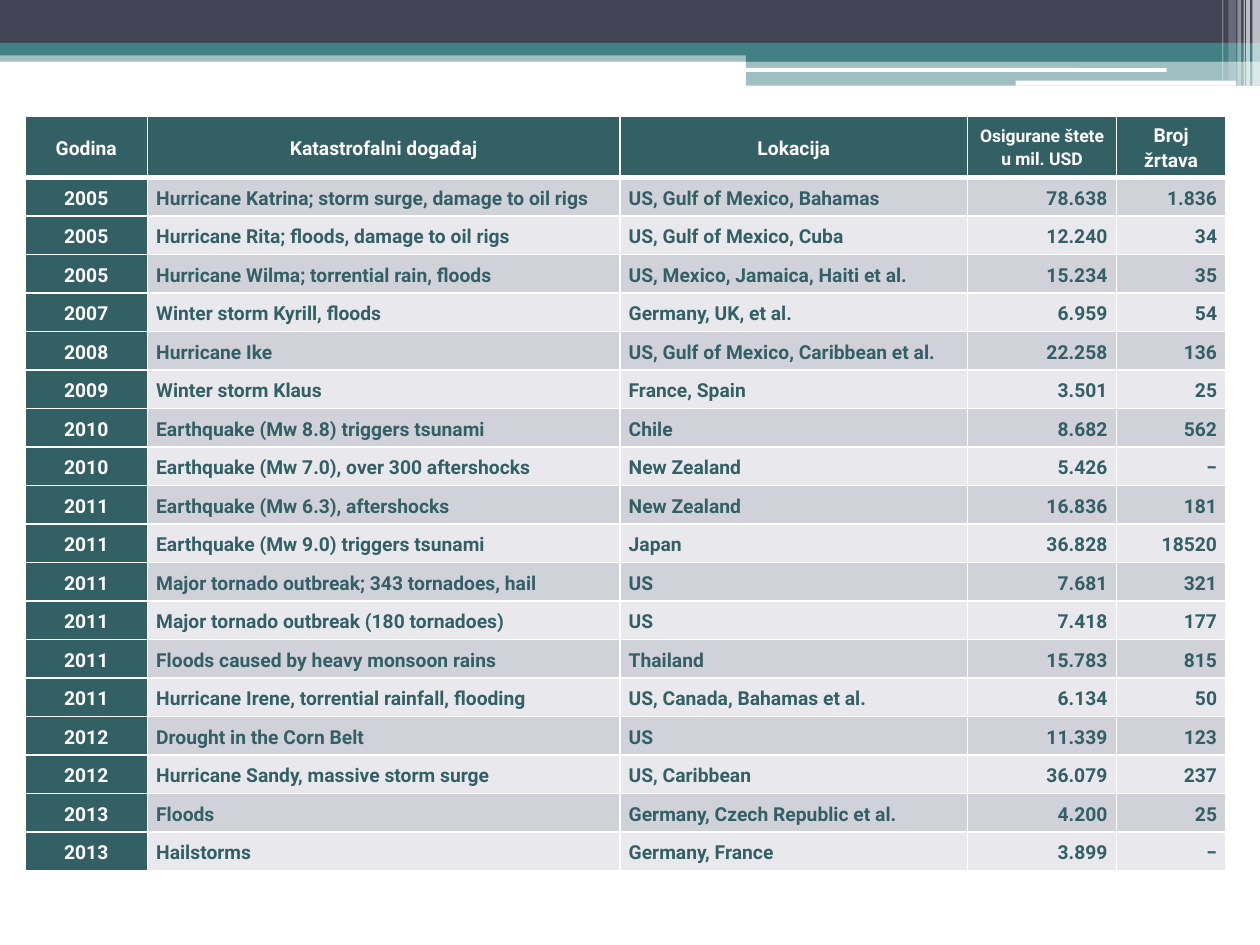
from lxml import etree
from pptx import Presentation
from pptx.dml.color import RGBColor
from pptx.enum.shapes import MSO_SHAPE
from pptx.enum.text import MSO_ANCHOR, PP_ALIGN
from pptx.oxml.ns import qn
from pptx.util import Inches, Pt

RECT, ROUND = MSO_SHAPE.RECTANGLE, MSO_SHAPE.ROUNDED_RECTANGLE
LEFT, CENTER, RIGHT = PP_ALIGN.LEFT, PP_ALIGN.CENTER, PP_ALIGN.RIGHT
MIDDLE = MSO_ANCHOR.MIDDLE

COLORS = {
    "navy": "424456",
    "teal": "438086",
    "dark": "326065",
    "odd": "D1D1DA",
    "even": "E9E9ED",
    "white": "FFFFFF",
}


def add_bar(kind, left, top, width, height, color, opacity=100):
    s = slide.shapes.add_shape(kind, Inches(left), Inches(top), Inches(width), Inches(height))
    s.shadow.inherit = False
    s.fill.solid()
    s.fill.fore_color.rgb = RGBColor.from_string(COLORS[color])
    s.line.fill.background()
    if opacity < 100:
        clr = s.fill._xPr.find(".//" + qn("a:srgbClr"))
        etree.SubElement(clr, qn("a:alpha"), val=str(opacity * 1000))


def set_borders(cell, widths):
    tc_pr = cell._tc.get_or_add_tcPr()
    for side, width in widths.items():
        ln = etree.SubElement(tc_pr, qn("a:ln" + side), w=str(Pt(width)))
        fill = etree.SubElement(ln, qn("a:solidFill"))
        etree.SubElement(fill, qn("a:srgbClr"), val=COLORS["white"])


prs = Presentation()
prs.slide_width, prs.slide_height = Inches(10), Inches(7.5)
slide = prs.slides.add_slide(prs.slide_layouts[6])

# Banner bands
add_bar(RECT, 0, 0.4, 10, 0.09, "teal", 50)
add_bar(RECT, 0, 0, 10, 0.34, "navy")
add_bar(RECT, 0, 0.34, 10, 0.1, "teal")
add_bar(RECT, 5.92, 0.39, 4.08, 0.1, "teal")
add_bar(RECT, 5.92, 0.48, 4.08, 0.2, "teal", 50)
add_bar(ROUND, 5.91, 0.54, 3.35, 0.03, "white")
add_bar(ROUND, 8.06, 0.64, 1.75, 0.04, "white")

# Translucent stripes at the right end: left, width, height, opacity
for left, width, height, opacity in [
    (9.94, 0.06, 0.68, 65),
    (9.89, 0.03, 0.68, 65),
    (9.87, 0.01, 0.68, 60),
    (9.82, 0.03, 0.68, 40),
    (9.75, 0.06, 0.64, 20),
    (9.7, 0.01, 0.64, 30),
]:
    add_bar(RECT, left, 0, width, height, "white", opacity)

# Catastrophe table
ROWS = [
    ("Godina", "Katastrofalni događaj", "Lokacija", "Osigurane štete u mil. USD", "Broj žrtava"),
    ("2005", "Hurricane Katrina; storm surge, damage to oil rigs", "US, Gulf of Mexico, Bahamas", "78.638", "1.836"),
    ("2005", "Hurricane Rita; floods, damage to oil rigs", "US, Gulf of Mexico, Cuba", "12.240", "34"),
    ("2005", "Hurricane Wilma; torrential rain, floods", "US, Mexico, Jamaica, Haiti et al.", "15.234", "35"),
    ("2007", "Winter storm Kyrill, floods", "Germany, UK, et al.", "6.959", "54"),
    ("2008", "Hurricane Ike", "US, Gulf of Mexico, Caribbean et al.", "22.258", "136"),
    ("2009", "Winter storm Klaus", "France, Spain", "3.501", "25"),
    ("2010", "Earthquake (Mw 8.8) triggers tsunami", "Chile", "8.682", "562"),
    ("2010", "Earthquake (Mw 7.0), over 300 aftershocks", "New Zealand", "5.426", "‒"),
    ("2011", "Earthquake (Mw 6.3), aftershocks", "New Zealand", "16.836", "181"),
    ("2011", "Earthquake (Mw 9.0) triggers tsunami", "Japan", "36.828", "18520"),
    ("2011", "Major tornado outbreak; 343 tornadoes, hail", "US", "7.681", "321"),
    ("2011", "Major tornado outbreak (180 tornadoes)", "US", "7.418", "177"),
    ("2011", "Floods caused by heavy monsoon rains", "Thailand", "15.783", "815"),
    ("2011", "Hurricane Irene, torrential rainfall, flooding", "US, Canada, Bahamas et al.", "6.134", "50"),
    ("2012", "Drought in the Corn Belt", "US", "11.339", "123"),
    ("2012", "Hurricane Sandy, massive storm surge", "US, Caribbean", "36.079", "237"),
    ("2013", "Floods", "Germany, Czech Republic et al.", "4.200", "25"),
    ("2013", "Hailstorms", "Germany, France", "3.899", "‒"),
]
COL_WIDTHS = [0.97, 3.75, 2.76, 1.18, 0.87]
COL_ALIGNS = [CENTER, LEFT, LEFT, RIGHT, RIGHT]
HEADER_HEIGHT, TABLE_HEIGHT = 0.49, 5.99

table = slide.shapes.add_table(
    len(ROWS), len(COL_WIDTHS), Inches(0.2), Inches(0.92),
    Inches(sum(COL_WIDTHS)), Inches(TABLE_HEIGHT)).table
for column, width in zip(table.columns, COL_WIDTHS):
    column.width = Inches(width)
body_height = (TABLE_HEIGHT - HEADER_HEIGHT) / (len(ROWS) - 1)

for i, row in enumerate(ROWS):
    table.rows[i].height = Inches(body_height if i else HEADER_HEIGHT)
    for j, text in enumerate(row):
        cell = table.cell(i, j)
        is_head = i == 0 or j == 0
        set_borders(cell, {"L": 1, "R": 1, "T": 3 if i == 1 else 1, "B": 3 if i == 0 else 1})
        cell.fill.solid()
        fill = "dark" if is_head else "odd" if i % 2 else "even"
        cell.fill.fore_color.rgb = RGBColor.from_string(COLORS[fill])
        cell.vertical_anchor = MIDDLE
        cell.margin_left = cell.margin_right = Inches(0.07)
        cell.margin_top = cell.margin_bottom = 0
        p = cell.text_frame.paragraphs[0]
        p.text = text
        p.alignment = COL_ALIGNS[j] if i else CENTER
        p.line_spacing = 1.15
        font = p.runs[0].font
        font.name = "Roboto"
        font.size = Pt(10 if (i, j) == (0, 3) else 11)
        font.bold = True
        font.color.rgb = RGBColor.from_string(COLORS["white" if is_head else "dark"])

prs.save("out.pptx")
